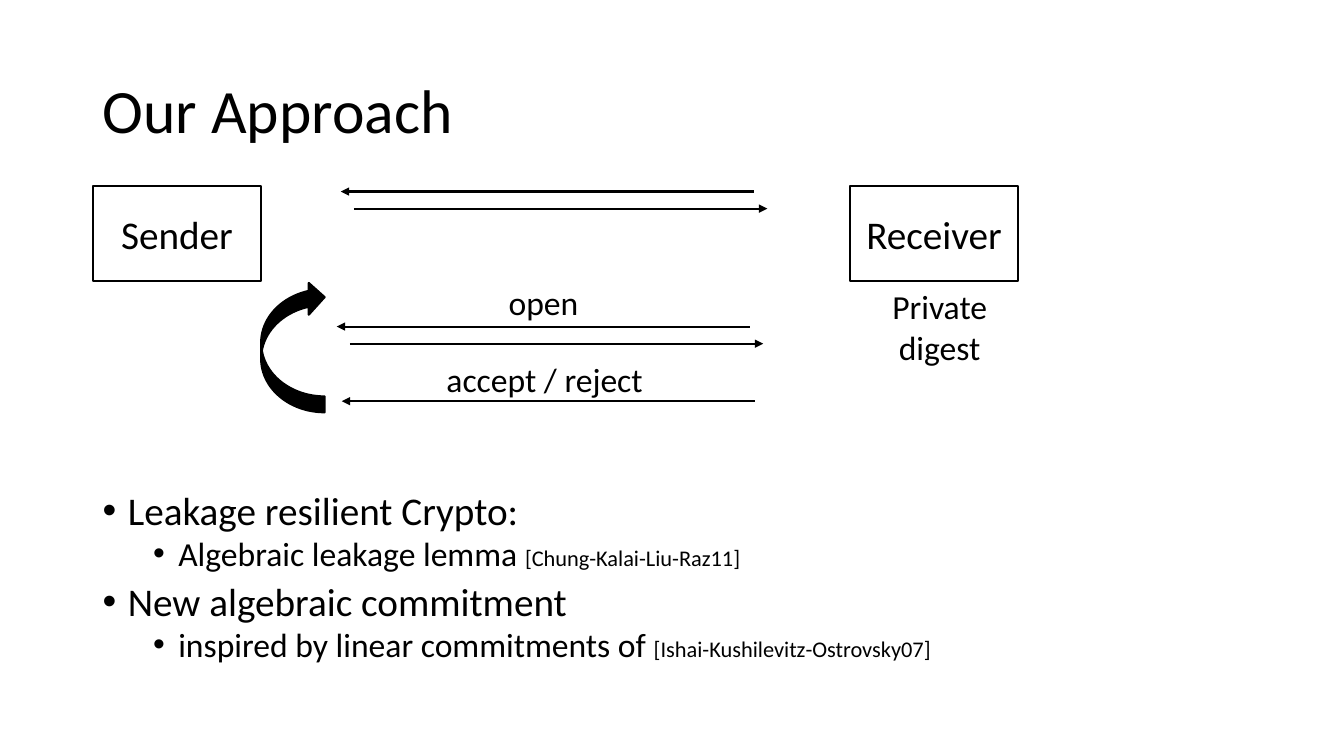
"""Build the slide on the commitment approach between a sender and a receiver."""
from dataclasses import dataclass

from lxml import etree
from pptx import Presentation
from pptx.dml.color import RGBColor
from pptx.enum.shapes import MSO_CONNECTOR, MSO_SHAPE
from pptx.enum.text import MSO_ANCHOR, PP_ALIGN
from pptx.oxml.ns import qn
from pptx.util import Inches, Pt

RECTANGLE, CURVED_ARROW = MSO_SHAPE.RECTANGLE, MSO_SHAPE.CURVED_RIGHT_ARROW
STRAIGHT = MSO_CONNECTOR.STRAIGHT
LEFT, CENTER = PP_ALIGN.LEFT, PP_ALIGN.CENTER
TOP, MIDDLE = MSO_ANCHOR.TOP, MSO_ANCHOR.MIDDLE


@dataclass(frozen=True)
class Theme:
    font: str = "Calibri"
    ink: RGBColor = RGBColor(0, 0, 0)
    paper: RGBColor = RGBColor(255, 255, 255)
    title: int = 44
    large: int = 28
    medium: int = 24
    small: int = 16
    stroke: float = 1.5


THEME = Theme()
WIDTH, HEIGHT = 13.33, 7.5
MARGIN, CONTENT_WIDTH = 0.92, 11.5
PARTY_TOP, PARTY_WIDTH, PARTY_HEIGHT = 1.85, 1.67, 0.94
PARTY_BOTTOM = PARTY_TOP + PARTY_HEIGHT
MESSAGE_LENGTH, REPLY_SHIFT, REPLY_DROP = 4.1, 0.13, 0.17

TITLE = "Our Approach"
PARTIES = [("Sender", MARGIN), ("Receiver", 8.43)]
LABELS = [
    ("Private digest", (8.71, PARTY_BOTTOM, 1.22, 0.91), CENTER),
    ("open", (4.37, 2.75, 2.04, 0.5), CENTER),
    ("accept / reject", (4.33, 3.51, 3.04, 0.5), LEFT),
]
MESSAGES = [(3.38, 1.9, True), (3.34, 3.24, True), (3.39, 3.98, False)]
POINTS = [
    (0, "Leakage resilient Crypto:", ""),
    (1, "Algebraic leakage lemma ", "[Chung-Kalai-Liu-Raz11]"),
    (0, "New algebraic commitment", ""),
    (1, "inspired by linear commitments of ", "[Ishai-Kushilevitz-Ostrovsky07]"),
]


def write(para, text, size=THEME.medium, align=LEFT, spacing=1.0, before=0):
    para.alignment, para.line_spacing, para.space_before = align, spacing, Pt(before)
    span = para.add_run()
    span.text = text
    span.font.name, span.font.size = THEME.font, Pt(size)
    span.font.color.rgb = THEME.ink


def add_text_box(page, bounds):
    frame = page.shapes.add_textbox(*map(Inches, bounds)).text_frame
    frame.word_wrap, frame.vertical_anchor = True, TOP
    return frame


def add_figure(page, kind, bounds, fill):
    figure = page.shapes.add_shape(kind, *map(Inches, bounds))
    figure.shadow.inherit = False
    figure.fill.solid()
    figure.fill.fore_color.rgb = fill
    figure.line.color.rgb, figure.line.width = THEME.ink, Pt(THEME.stroke)
    return figure


def add_arrow(page, left, top, length, end):
    ends = map(Inches, (left, top, left + length, top))
    arrow = page.shapes.add_connector(STRAIGHT, *ends)
    arrow.line.color.rgb, arrow.line.width = THEME.ink, Pt(THEME.stroke)
    etree.SubElement(arrow.line._get_or_add_ln(), qn(end), type="triangle")
    etree.SubElement(arrow._element.spPr, qn("a:effectLst"))


def add_bullet(para, level):
    para.level = level
    properties = para._p.get_or_add_pPr()
    properties.set("marL", str(Inches(0.25 + 0.5 * level)))
    properties.set("indent", str(-Inches(0.25)))
    etree.SubElement(properties, qn("a:buFont"), typeface="Arial")
    etree.SubElement(properties, qn("a:buChar"), char="•")


def add_title(page):
    title = page.shapes.title
    title.left, title.top = Inches(MARGIN), Inches(0.4)
    title.width, title.height = Inches(CONTENT_WIDTH), Inches(1.45)
    title.text_frame.vertical_anchor = MIDDLE
    write(title.text_frame.paragraphs[0], TITLE, size=THEME.title, spacing=0.9)


def add_points(page):
    frame = add_text_box(page, (MARGIN, 4.87, CONTENT_WIDTH, 1.89))
    for index, (level, text, citation) in enumerate(POINTS):
        para = frame.add_paragraph() if index else frame.paragraphs[0]
        rhythm = {"spacing": 0.8, "before": 5 if level else 10}
        write(para, text, size=THEME.medium if level else THEME.large, **rhythm)
        if citation:
            write(para, citation, size=THEME.small, **rhythm)
        add_bullet(para, level)


def add_protocol(page):
    for name, left in PARTIES:
        bounds = (left, PARTY_TOP, PARTY_WIDTH, PARTY_HEIGHT)
        frame = add_figure(page, RECTANGLE, bounds, THEME.paper).text_frame
        frame.vertical_anchor = MIDDLE
        write(frame.paragraphs[0], name, size=THEME.large, align=CENTER)

    loop_bounds = (MARGIN + PARTY_WIDTH, PARTY_BOTTOM, 0.63, 1.3)
    loop = add_figure(page, CURVED_ARROW, loop_bounds, THEME.ink)
    loop.rotation = 180
    loop._element.spPr.xfrm.set("flipH", "1")

    for left, top, answered in MESSAGES:
        add_arrow(page, left, top, MESSAGE_LENGTH, "a:headEnd")
        if answered:
            add_arrow(page, left + REPLY_SHIFT, top + REPLY_DROP, MESSAGE_LENGTH, "a:tailEnd")

    for text, bounds, align in LABELS:
        write(add_text_box(page, bounds).paragraphs[0], text, align=align)


def main():
    deck = Presentation()
    deck.slide_width, deck.slide_height = Inches(WIDTH), Inches(HEIGHT)
    page = deck.slides.add_slide(deck.slide_layouts[5])
    page.background.fill.solid()
    page.background.fill.fore_color.rgb = THEME.paper
    add_title(page)
    add_points(page)
    add_protocol(page)
    deck.save("out.pptx")


if __name__ == "__main__":
    main()
